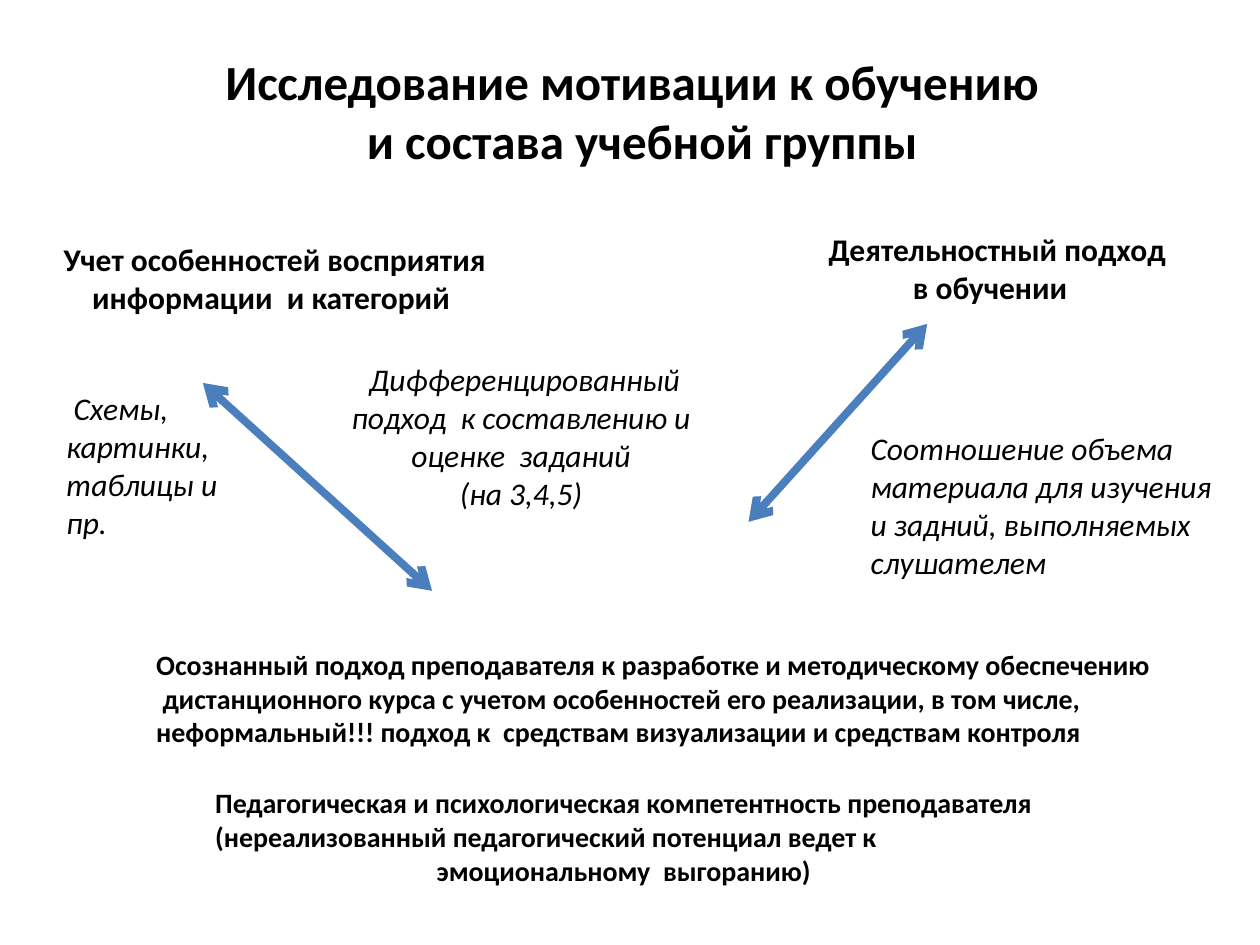
from lxml.etree import SubElement
from pptx import Presentation
from pptx.dml.color import RGBColor
from pptx.enum.shapes import MSO_CONNECTOR
from pptx.enum.text import MSO_ANCHOR, MSO_AUTO_SIZE, PP_ALIGN
from pptx.oxml.ns import qn
from pptx.util import Cm, Pt

BLACK = RGBColor(0x00, 0x00, 0x00)
BLUE = RGBColor(0x4B, 0x7E, 0xBC)
LEFT, CENTER = PP_ALIGN.LEFT, PP_ALIGN.CENTER


def place(shape, left, top, width, height):
    shape.left, shape.top = Cm(left), Cm(top)
    shape.width, shape.height = Cm(width), Cm(height)


def write_text(shape, lines, size=18, bold=False, italic=False, wrap=False):
    """Fill a shape with paragraphs given as (text, alignment) pairs."""
    frame = shape.text_frame
    frame.word_wrap = wrap
    frame.auto_size = MSO_AUTO_SIZE.SHAPE_TO_FIT_TEXT
    frame.vertical_anchor = MSO_ANCHOR.TOP
    for index, (text, alignment) in enumerate(lines):
        paragraph = frame.add_paragraph() if index else frame.paragraphs[0]
        paragraph.alignment = alignment
        paragraph.space_before = Pt(0)
        run = paragraph.add_run()
        run.text = text
        font = run.font
        font.name, font.size = "Calibri", Pt(size)
        font.bold, font.italic = bold, italic
        font.color.rgb = BLACK


def add_text(slide, box, lines, **text_format):
    shape = slide.shapes.add_textbox(*map(Cm, box))
    write_text(shape, lines, **text_format)


def add_double_arrow(slide, start, end):
    connector = slide.shapes.add_connector(
        MSO_CONNECTOR.STRAIGHT, *map(Cm, start + end))
    connector.line.color.rgb = BLUE
    connector.line.width = Pt(4.5)
    line = connector.line._get_or_add_ln()
    for tag in ("a:headEnd", "a:tailEnd"):
        SubElement(line, qn(tag), type="arrow")
    SubElement(connector._element.spPr, qn("a:effectLst"))


def main():
    presentation = Presentation()
    presentation.slide_width, presentation.slide_height = Cm(25.4), Cm(19.05)
    slide = presentation.slides.add_slide(presentation.slide_layouts[5])

    title = slide.shapes.title
    write_text(title, [("Исследование мотивации к обучению", LEFT),
                       (" и состава учебной группы", CENTER)],
               size=28, bold=True)
    place(title, 4.29, 0.91, 17.09, 2.64)

    add_text(slide, (16.31, 4.52, 7.57, 1.8),
             [(" Деятельностный подход", LEFT), ("в обучении ", CENTER)],
             bold=True)
    add_text(slide, (0.89, 4.72, 9.4, 1.8),
             [(" Учет особенностей восприятия", LEFT),
              ("информации  и категорий", CENTER)], bold=True)
    add_text(slide, (2.9, 12.93, 20.75, 2.31),
             [("Осознанный подход преподавателя к разработке и методическому обеспечению", LEFT),
              (" дистанционного курса с учетом особенностей его реализации, в том числе,", LEFT),
              ("неформальный!!! подход к  средствам визуализации и средствам контроля", LEFT)],
             size=16, bold=True)
    add_text(slide, (4.09, 15.72, 17.15, 2.31),
             [("Педагогическая и психологическая компетентность преподавателя", LEFT),
              ("(нереализованный педагогический потенциал ведет к", LEFT),
              ("эмоциональному  выгоранию)", CENTER)], size=16, bold=True)

    add_double_arrow(slide, (4.09, 7.72), (8.71, 11.91))
    add_double_arrow(slide, (18.69, 6.53), (15.09, 10.52))

    add_text(slide, (1.09, 7.72, 3.99, 3.33),
             [(" Схемы, картинки, таблицы и пр.", LEFT)],
             italic=True, wrap=True)
    add_text(slide, (17.3, 8.53, 7.54, 3.33),
             [("Соотношение объема материала для изучения и задний, "
               "выполняемых слушателем", LEFT)], italic=True, wrap=True)
    add_text(slide, (6.71, 7.14, 7.59, 3.33),
             [(" Дифференцированный подход  к составлению и оценке  заданий", CENTER),
              ("(на 3,4,5)", CENTER)], italic=True, wrap=True)

    presentation.save("out.pptx")


if __name__ == "__main__":
    main()
